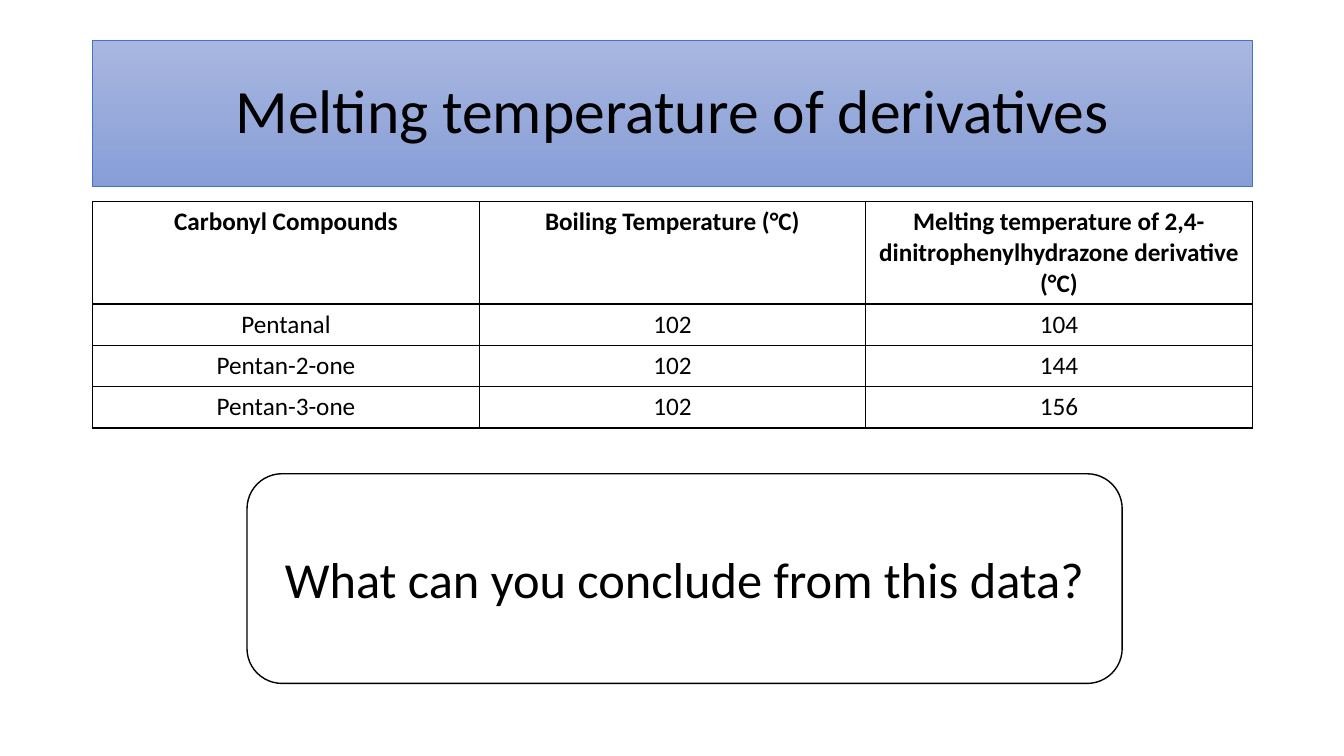
from lxml import etree
from pptx import Presentation
from pptx.dml.color import RGBColor
from pptx.enum.shapes import MSO_SHAPE
from pptx.enum.text import MSO_ANCHOR, PP_ALIGN
from pptx.oxml.ns import qn
from pptx.util import Inches, Pt

CENTER = PP_ALIGN.CENTER
MIDDLE = MSO_ANCHOR.MIDDLE
ROUNDED = MSO_SHAPE.ROUNDED_RECTANGLE

COLORS = {
    "text": "000000",
    "border": "000000",
    "paper": "FFFFFF",
    "title_top": "A8B7DF",
    "title_bottom": "889ED7",
    "title_line": "4472C4",
}
TITLE = "Melting temperature of derivatives"
QUESTION = "What can you conclude from this data?"
ROWS = [
    ("Carbonyl Compounds", "Boiling Temperature (°C)",
     "Melting temperature of 2,4-dinitrophenylhydrazone derivative (°C)"),
    ("Pentanal", "102", "104"),
    ("Pentan-2-one", "102", "144"),
    ("Pentan-3-one", "102", "156"),
]
LEFT, WIDTH = 0.92, 11.5
TITLE_BOX = (LEFT, 0.4, WIDTH, 1.45)
QUESTION_BOX = (2.45, 4.7, 8.68, 2.08)
TABLE_TOP, HEADER_HEIGHT, ROW_HEIGHT = 2, 1.01, 0.41


def rgb(name):
    return RGBColor.from_string(COLORS[name])


def write(tf, text, size, bold=False):
    tf.word_wrap = True
    p = tf.paragraphs[0]
    p.alignment = CENTER
    r = p.add_run()
    r.text = text
    for key, value in {"size": Pt(size), "bold": bold, "name": "Calibri"}.items():
        setattr(r.font, key, value)
    r.font.color.rgb = rgb("text")
    return p


def outline(sp, color, width):
    sp.line.color.rgb = rgb(color)
    sp.line.width = Pt(width)


def add_borders(cell):
    props = cell._tc.get_or_add_tcPr()
    for side in ("lnL", "lnR", "lnT", "lnB"):
        line = etree.SubElement(props, qn(f"a:{side}"), w=str(Pt(1)))
        fill = etree.SubElement(line, qn("a:solidFill"))
        etree.SubElement(fill, qn("a:srgbClr"), val=COLORS["border"])


def add_title(s):
    sp = s.shapes.title
    sp.left, sp.top, sp.width, sp.height = map(Inches, TITLE_BOX)
    sp.fill.gradient()
    sp.fill.gradient_angle = 270
    for stop, name in zip(sp.fill.gradient_stops, ("title_top", "title_bottom")):
        stop.color.rgb = rgb(name)
    outline(sp, "title_line", 0.5)
    sp.text_frame.vertical_anchor = MIDDLE
    write(sp.text_frame, TITLE, 44).line_spacing = 0.9


def add_data_table(s):
    heights = [HEADER_HEIGHT] + [ROW_HEIGHT] * (len(ROWS) - 1)
    frame = s.shapes.add_table(len(ROWS), len(ROWS[0]), Inches(LEFT), Inches(TABLE_TOP),
                               Inches(WIDTH), Inches(sum(heights)))
    table = frame.table
    table.first_row = table.horz_banding = False
    for i, (height, texts) in enumerate(zip(heights, ROWS)):
        table.rows[i].height = Inches(height)
        for j, text in enumerate(texts):
            cell = table.cell(i, j)
            add_borders(cell)
            cell.fill.background()
            write(cell.text_frame, text, 18, bold=i == 0)


def add_question(s):
    sp = s.shapes.add_shape(ROUNDED, *map(Inches, QUESTION_BOX))
    sp.shadow.inherit = False
    sp.fill.solid()
    sp.fill.fore_color.rgb = rgb("paper")
    outline(sp, "border", 1)
    sp.text_frame.vertical_anchor = MIDDLE
    write(sp.text_frame, QUESTION, 36)


def main():
    prs = Presentation()
    prs.slide_width, prs.slide_height = Inches(13.33), Inches(7.5)
    s = prs.slides.add_slide(prs.slide_layouts[5])
    add_title(s)
    add_data_table(s)
    add_question(s)
    prs.save("out.pptx")


if __name__ == "__main__":
    main()
